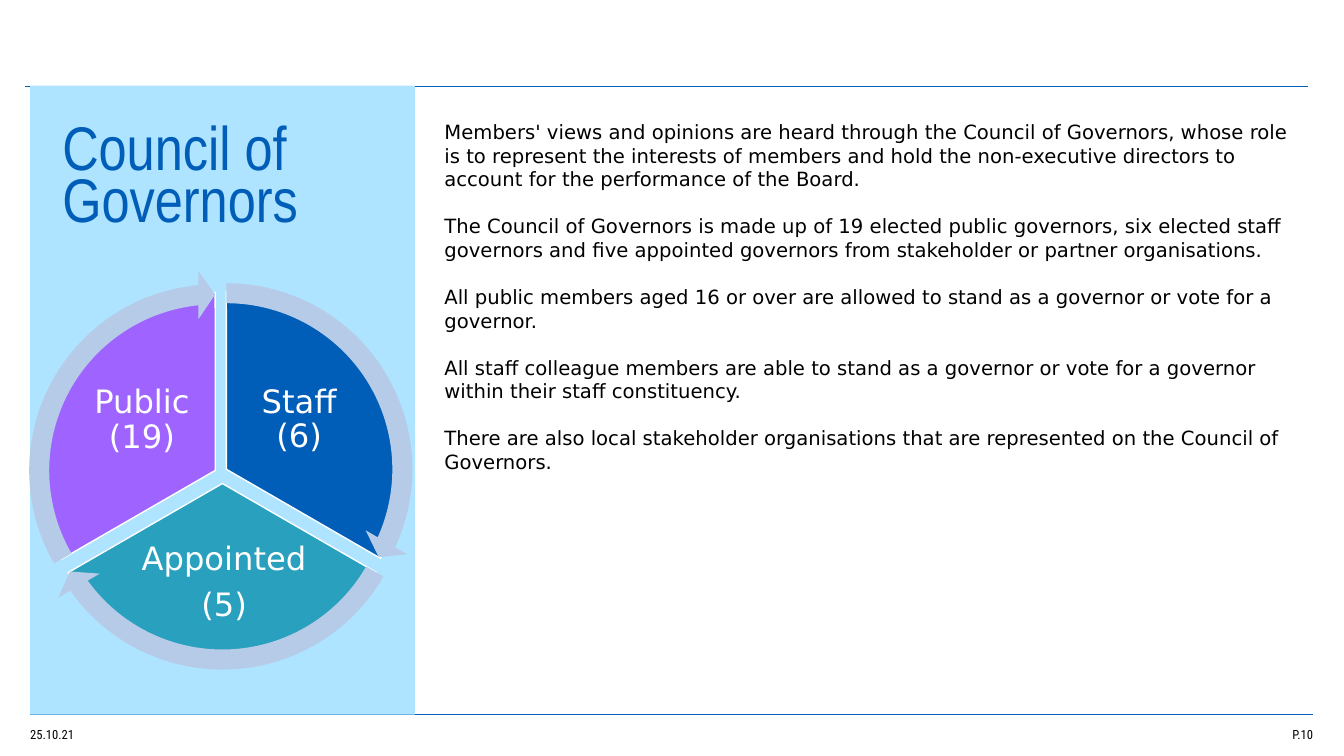
from dataclasses import dataclass

from lxml.etree import SubElement
from pptx import Presentation
from pptx.dml.color import RGBColor as RGB
from pptx.enum.shapes import MSO_CONNECTOR as Connector, MSO_SHAPE as Preset
from pptx.enum.text import MSO_ANCHOR as Anchor, MSO_AUTO_SIZE as AutoSize, PP_ALIGN as Align
from pptx.oxml.ns import qn
from pptx.util import Cm, Pt


@dataclass(frozen=True)
class Theme:
    blue: RGB = RGB.from_string("005EB8")
    sky: RGB = RGB.from_string("AEE4FF")
    teal: RGB = RGB.from_string("28A0BE")
    purple: RGB = RGB.from_string("9F64FF")
    arrow: RGB = RGB.from_string("B5CBE7")
    white: RGB = RGB.from_string("FFFFFF")
    black: RGB = RGB.from_string("000000")
    title_font: str = "Arial Narrow"
    body_font: str = "DejaVu Sans"
    footer_font: str = "Roboto Condensed"
    title_size: Pt = Pt(44)
    label_size: Pt = Pt(23)
    body_size: Pt = Pt(14)
    footer_size: Pt = Pt(9)
    rule_width: Pt = Pt(1)


theme = Theme()


def add_text(shapes, box, paragraphs, frame_format, paragraph_format, font_format, color, gap=0):
    frame = shapes.add_textbox(*map(Cm, box)).text_frame
    frame.word_wrap = True
    for name, value in frame_format.items():
        setattr(frame, name, value)
    for index, wording in enumerate(paragraphs):
        paragraph = frame.add_paragraph() if index else frame.paragraphs[0]
        run = paragraph.add_run()
        run.text = wording
        run.font.color.rgb = color
        for target, values in ((paragraph, paragraph_format), (run.font, font_format)):
            for name, value in values.items():
                setattr(target, name, value)
        if index:
            paragraph.space_before = Pt(gap)


def add_filled(shapes, preset, box, color, angles=()):
    shape = shapes.add_shape(preset, *map(Cm, box))
    shape.shadow.inherit = False
    shape.fill.solid()
    shape.fill.fore_color.rgb = color
    shape.line.fill.background()
    for index, value in enumerate(angles):
        shape.adjustments[index] = value
    return shape


deck = Presentation()
deck.slide_width, deck.slide_height = Cm(33.87), Cm(19.05)
slide = deck.slides.add_slide(deck.slide_layouts[6])

for left, right, height in ((0.64, 32.97, 2.18), (0.76, 33.1, 18.01)):
    rule = slide.shapes.add_connector(
        Connector.STRAIGHT, Cm(left), Cm(height), Cm(right), Cm(height))
    rule.line.color.rgb = theme.blue
    rule.line.width = theme.rule_width
    SubElement(rule._element.spPr, qn("a:effectLst"))

add_filled(slide.shapes, Preset.RECTANGLE, (0.76, 2.16, 9.7, 15.85), theme.sky)

page_frame = dict(margin_left=0, margin_right=0, margin_top=Cm(0.13), margin_bottom=Cm(0.13))
growing_frame = page_frame | dict(auto_size=AutoSize.SHAPE_TO_FIT_TEXT)

add_text(slide.shapes, (1.57, 3.12, 8.28, 2.9), ["Council of Governors"], growing_frame,
         dict(line_spacing=0.7), dict(name=theme.title_font, size=theme.title_size), theme.blue)

for left, wording, side in ((0.76, "25.10.21", Align.LEFT), (29.64, "P.10", Align.RIGHT)):
    add_text(slide.shapes, (left, 18.29, 3.45, 0.53), [wording],
             growing_frame | dict(vertical_anchor=Anchor.MIDDLE),
             dict(line_spacing=0.7, alignment=side),
             dict(name=theme.footer_font, size=theme.footer_size), theme.black)

statements = [
    "Members' views and opinions are heard through the Council of Governors, whose role is to "
    "represent the interests of members and hold the non-executive directors to account for "
    "the performance of the Board.",
    "The Council of Governors is made up of 19 elected public governors, six elected staff "
    "governors and five appointed governors from stakeholder or partner organisations.",
    "All public members aged 16 or over are allowed to stand as a governor or vote for a governor.",
    "All staff colleague members are able to stand as a governor or vote for a governor within "
    "their staff constituency.",
    "There are also local stakeholder organisations that are represented on the Council of "
    "Governors.",
]
add_text(slide.shapes, (11.2, 2.9, 21.74, 14.38), statements, page_frame, {},
         dict(name=theme.body_font, size=theme.body_size), theme.black, gap=16.8)

constituencies = [
    (["Staff (6)"], theme.blue, (1.22, 7.34), (162, 18), (5.94, 9.25, 3.2, 2.67)),
    (["Appointed", "(5)"], theme.teal, (1.12, 7.7), (18, 90), (3.25, 13.51, 4.8, 2.36)),
    (["Public (19)"], theme.purple, (0.94, 7.37), (90, 162), (1.98, 9.27, 3.2, 2.67)),
]
pie_size, arrow_size = 8.97, 10.08
overhang = (arrow_size - pie_size) / 2
head_angle = 3.28
label_frame = dict(vertical_anchor=Anchor.MIDDLE) | dict.fromkeys(
    ("margin_left", "margin_right", "margin_top", "margin_bottom"), Cm(0.08))

wheel = slide.shapes.add_group_shape().shapes
for label, color, corner, angles, label_box in constituencies:
    sector = add_filled(wheel, Preset.PIE, (*corner, pie_size, pie_size), color, angles)
    sector.line.color.rgb = theme.white
    sector.line.width = theme.rule_width
    add_text(wheel, label_box, label, label_frame,
             dict(alignment=Align.CENTER, line_spacing=0.9, space_after=Pt(8)),
             dict(name=theme.body_font, size=theme.label_size), theme.white)

for _, _, (left, top), (start, end), _ in constituencies:
    add_filled(wheel, Preset.CIRCULAR_ARROW,
               (left - overhang, top - overhang, arrow_size, arrow_size), theme.arrow,
               (0.05, head_angle, end - head_angle, start, 0.06))

deck.save("out.pptx")
